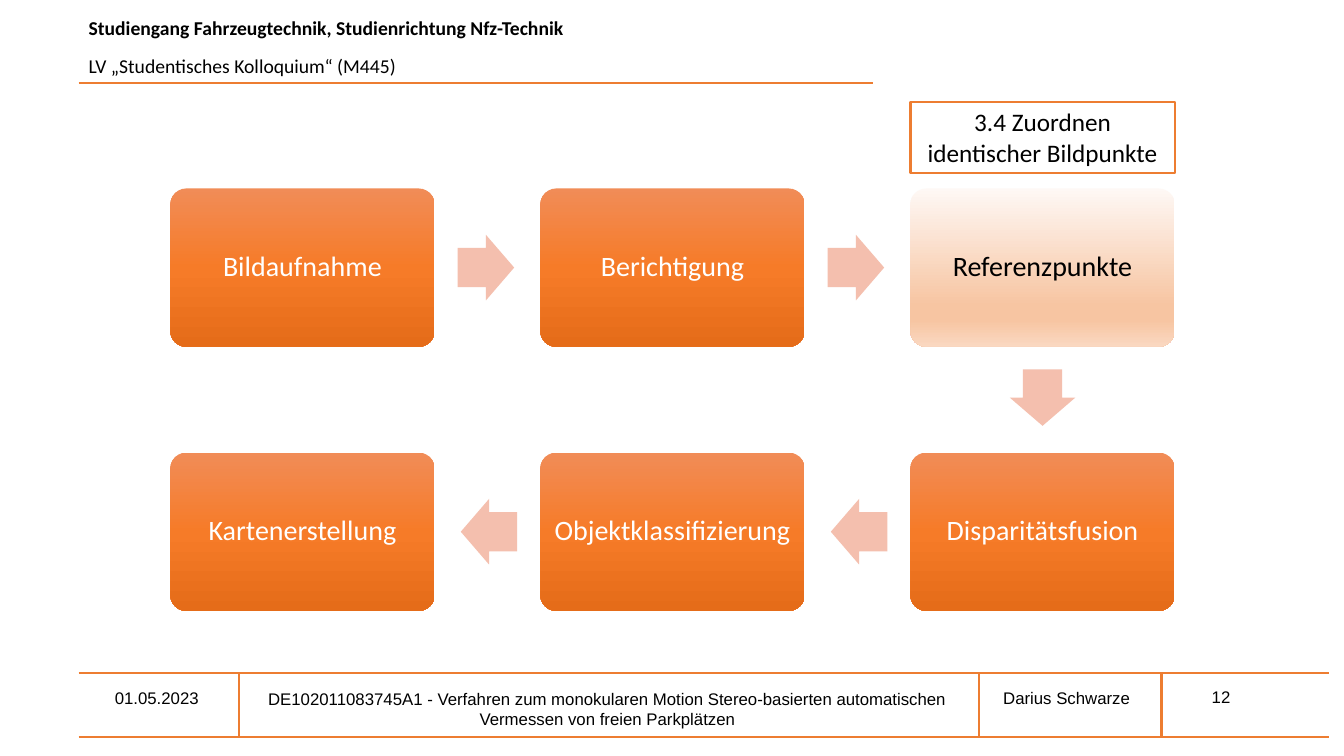
from lxml import etree
from pptx import Presentation
from pptx.dml.color import RGBColor
from pptx.enum.shapes import MSO_CONNECTOR as CONNECTOR, MSO_SHAPE as SHAPE
from pptx.enum.text import MSO_ANCHOR as ANCHOR, PP_ALIGN as ALIGN
from pptx.oxml.ns import qn
from pptx.util import Pt

PX = 9144  # 100 px to the inch
ORANGE, PALE, BLACK, WHITE = "ED7D31", "F4BFAE", "000000", "FFFFFF"
STRONG = [(0, "F18C57"), (50, "F67B28"), (100, "E56C19")]
LIGHT = [(0, "FEF8F5"), (74, "F7C5A2"), (83, "F7C5A2"), (100, "FAD8C1")]


def rgb(color):
    return RGBColor.from_string(color)


def write(p, text, size, font, color=BLACK, bold=False, align=ALIGN.LEFT):
    p.alignment = align
    r = p.add_run()
    r.text = text
    r.font.size, r.font.name, r.font.bold = Pt(size), font, bold
    r.font.color.rgb = rgb(color)


prs = Presentation()
prs.slide_width, prs.slide_height = 1333 * PX, 750 * PX
s = prs.slides.add_slide(prs.slide_layouts[6])

# Header
tf = s.shapes.add_textbox(78 * PX, 11 * PX, 900 * PX, 51 * PX).text_frame
tf.word_wrap = True
write(tf.paragraphs[0], "Studiengang Fahrzeugtechnik, Studienrichtung Nfz-Technik",
      14, "Calibri", bold=True)
p = tf.add_paragraph()
p.space_before = Pt(10)
write(p, "LV „Studentisches Kolloquium“ (M445)", 14, "Calibri")

# Footer texts
footer = [
    ("01.05.2023", 104, 677, 324, 30, ALIGN.LEFT, ANCHOR.TOP),
    ("DE102011083745A1 - Verfahren zum monokularen Motion Stereo-basierten "
     "automatischen Vermessen von freien Parkplätzen",
     233, 678, 739, 51, ALIGN.CENTER, ANCHOR.TOP),
    ("Darius Schwarze", 953, 672, 210, 40, ALIGN.CENTER, ANCHOR.MIDDLE),
    ("12", 1192, 676, 93, 30, ALIGN.LEFT, ANCHOR.TOP),
]
for text, x, y, w, h, align, anchor in footer:
    tf = s.shapes.add_textbox(x * PX, y * PX, w * PX, h * PX).text_frame
    tf.word_wrap, tf.vertical_anchor = True, anchor
    write(tf.paragraphs[0], text, 12, "Arial", align=align)

# Header rule and footer frame
rules = [(78, 82, 866, 82), (78, 668, 1318, 668), (78, 731, 1318, 731),
         (237, 668, 237, 731), (971, 667, 971, 730), (1152, 668, 1152, 731)]
for ends in rules:
    line = s.shapes.add_connector(CONNECTOR.STRAIGHT, *[v * PX for v in ends])
    line.line.color.rgb, line.line.width = rgb(ORANGE), Pt(1.5)
    etree.SubElement(line._element.spPr, qn("a:effectLst"))

# Process steps on a grid of three columns and two rows
LEFT, TOP, STEP_X, STEP_Y = 169, 187, 367, 262
steps = [("Bildaufnahme", 0, 0), ("Berichtigung", 1, 0), ("Referenzpunkte", 2, 0),
         ("Disparitätsfusion", 2, 1), ("Objektklassifizierung", 1, 1),
         ("Kartenerstellung", 0, 1)]
for name, col, row in steps:
    current = name == "Referenzpunkte"
    sp = s.shapes.add_shape(SHAPE.ROUNDED_RECTANGLE, (LEFT + col * STEP_X) * PX,
                            (TOP + row * STEP_Y) * PX, 262 * PX, 157 * PX)
    sp.adjustments[0] = 0.1
    sp.shadow.inherit = False
    sp.line.fill.background()
    sp.fill.gradient()
    sp.fill.gradient_angle = 270
    stops = sp._element.spPr.find(".//" + qn("a:gsLst"))
    for stop in list(stops):
        stops.remove(stop)
    for pos, color in LIGHT if current else STRONG:
        stop = etree.SubElement(stops, qn("a:gs"), pos=str(pos * 1000))
        etree.SubElement(stop, qn("a:srgbClr"), val=color)
    tf = sp.text_frame
    tf.word_wrap, tf.vertical_anchor = True, ANCHOR.MIDDLE
    tf.margin_left = tf.margin_right = tf.margin_top = tf.margin_bottom = 8 * PX
    tf.paragraphs[0].line_spacing = 0.9
    write(tf.paragraphs[0], name, 20, "Calibri", BLACK if current else WHITE,
          align=ALIGN.CENTER)

# Arrows between the steps
arrows = [(1006, 362, 90)]
for col in range(2):
    x = LEFT + col * STEP_X
    arrows += [(x + 285, TOP + 46, 0), (x + 288, TOP + STEP_Y + 46, 180)]
for x, y, angle in arrows:
    sp = s.shapes.add_shape(SHAPE.RIGHT_ARROW, x * PX, y * PX, 56 * PX, 65 * PX)
    sp.adjustments[0], sp.adjustments[1] = 0.6, 0.5
    sp.rotation = angle
    sp.shadow.inherit = False
    sp.fill.solid()
    sp.fill.fore_color.rgb = rgb(PALE)
    sp.line.fill.background()

# Label above the current step
sp = s.shapes.add_shape(SHAPE.RECTANGLE, 903 * PX, 101 * PX, 262 * PX, 71 * PX)
sp.shadow.inherit = False
sp.fill.solid()
sp.fill.fore_color.rgb = rgb(WHITE)
sp.line.color.rgb, sp.line.width = rgb(ORANGE), Pt(1.5)
tf = sp.text_frame
tf.word_wrap, tf.vertical_anchor = True, ANCHOR.TOP
write(tf.paragraphs[0], "3.4 Zuordnen identischer Bildpunkte", 18, "Calibri",
      align=ALIGN.CENTER)

prs.save("out.pptx")
